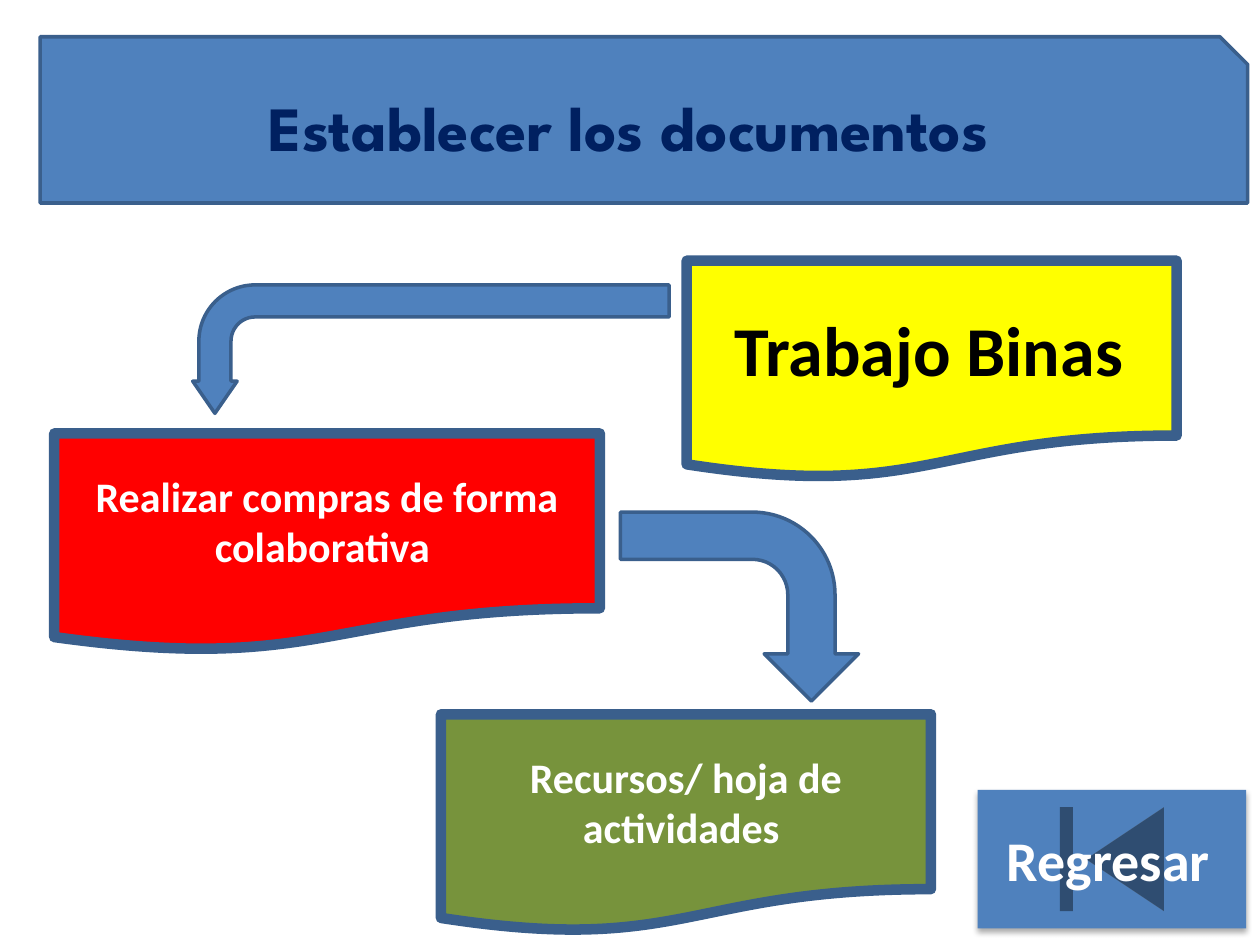
from dataclasses import dataclass

from lxml.etree import SubElement
from pptx import Presentation
from pptx.dml.color import RGBColor as RGB
from pptx.enum.shapes import MSO_SHAPE as Kind
from pptx.enum.text import MSO_ANCHOR as Anchor, PP_ALIGN as Align
from pptx.oxml.ns import qn
from pptx.shapes.autoshape import Shape
from pptx.slide import Slide
from pptx.util import Pt

BLUE = RGB(0x4F, 0x81, 0xBD)
EDGE = RGB(0x3A, 0x5F, 0x8C)
NAVY = RGB(0x00, 0x20, 0x60)
RED = RGB(0xFF, 0x00, 0x00)
YELLOW = RGB(0xFF, 0xFF, 0x00)
GREEN = RGB(0x77, 0x93, 0x3C)
WHITE = RGB(0xFF, 0xFF, 0xFF)
BLACK = RGB(0x00, 0x00, 0x00)

THIN, THICK = 2, 6
CARD_H = 124.6


@dataclass(frozen=True)
class Box:
    left: float
    top: float
    width: float
    height: float


@dataclass(frozen=True)
class Card:
    text: str
    box: Box
    fill: RGB
    size: float = 24
    color: RGB = WHITE
    tail: float = 24


@dataclass(frozen=True)
class Bend:
    box: Box
    turn: float
    flip: bool = False
    adjust: tuple[float, ...] = ()


CARDS = (
    Card("Realizar compras de forma colaborativa", Box(31, 247.7, 311.8, CARD_H), RED),
    Card("Trabajo Binas", Box(392.4, 149, 280, CARD_H), YELLOW,
         size=40, color=BLACK, tail=14),
    Card("Recursos/ hoja de actividades", Box(252, 408.2, 280, CARD_H), GREEN),
)

BENDS = (
    Bend(Box(209.5, 63.4, 73.4, 272.2), 270, True, (0.25, 0.173, 0.25, 0.438)),
    Bend(Box(368.6, 278.6, 108, 136.1), 90),
)


def add_form(slide: Slide, kind: Kind, box: Box, fill: RGB, line: float = 0) -> Shape:
    """Add a flat shape; a line width of 0 means no outline."""
    form = slide.shapes.add_shape(
        kind, Pt(box.left), Pt(box.top), Pt(box.width), Pt(box.height))
    form.fill.solid()
    form.fill.fore_color.rgb = fill
    if line:
        form.line.color.rgb = EDGE
        form.line.width = Pt(line)
    else:
        form.line.fill.background()
    form.shadow.inherit = False
    return form


def write(form: Shape, text: str, *, size: float, color: RGB = WHITE,
          font: str = "Calibri", tail: float) -> None:
    """Set centred bold text, closed by a space of the tail size."""
    frame = form.text_frame
    frame.word_wrap = True
    frame.vertical_anchor = Anchor.MIDDLE
    para = frame.paragraphs[0]
    para.alignment = Align.CENTER
    parts = [(text + " ", size)] if tail == size else [(text, size), (" ", tail)]
    for part, points in parts:
        run = para.add_run()
        run.text = part
        run.font.name = font
        run.font.size = Pt(points)
        run.font.bold = points == size
        run.font.color.rgb = color


def add_shade(form: Shape) -> None:
    """Cast a soft shadow straight down."""
    effects = form.element.spPr.find(qn("a:effectLst"))
    shade = SubElement(effects, qn("a:outerShdw"), blurRad=str(Pt(3.5)),
                       dist=str(Pt(2.2)), dir="5400000", rotWithShape="0")
    tint = SubElement(shade, qn("a:srgbClr"), val=str(BLACK))
    SubElement(tint, qn("a:alpha"), val="32000")


def add_card(slide: Slide, card: Card) -> None:
    form = add_form(slide, Kind.FLOWCHART_DOCUMENT, card.box, card.fill, THICK)
    write(form, card.text, size=card.size, color=card.color, tail=card.tail)


def add_bend(slide: Slide, bend: Bend) -> None:
    form = add_form(slide, Kind.BENT_ARROW, bend.box, BLUE, THIN)
    form.rotation = bend.turn
    for index, value in enumerate(bend.adjust):
        form.adjustments[index] = value
    if bend.flip:
        form.element.spPr.find(qn("a:xfrm")).set("flipH", "1")


def main() -> None:
    deck = Presentation()
    deck.slide_width, deck.slide_height = Pt(720), Pt(540)
    slide = deck.slides.add_slide(deck.slide_layouts[6])

    title = add_form(slide, Kind.SNIP_1_RECTANGLE, Box(23, 21, 690, 95), BLUE, THIN)
    write(title, "Establecer los documentos", size=36, color=NAVY,
          font="League Spartan", tail=36)

    button = add_form(slide, Kind.ACTION_BUTTON_BEGINNING,
                      Box(558.7, 451.4, 153.4, 79.2), BLUE)
    add_shade(button)
    write(button, "Regresar", size=32, tail=18)

    for card in CARDS:
        add_card(slide, card)
    for bend in BENDS:
        add_bend(slide, bend)
    deck.save("out.pptx")


if __name__ == "__main__":
    main()
